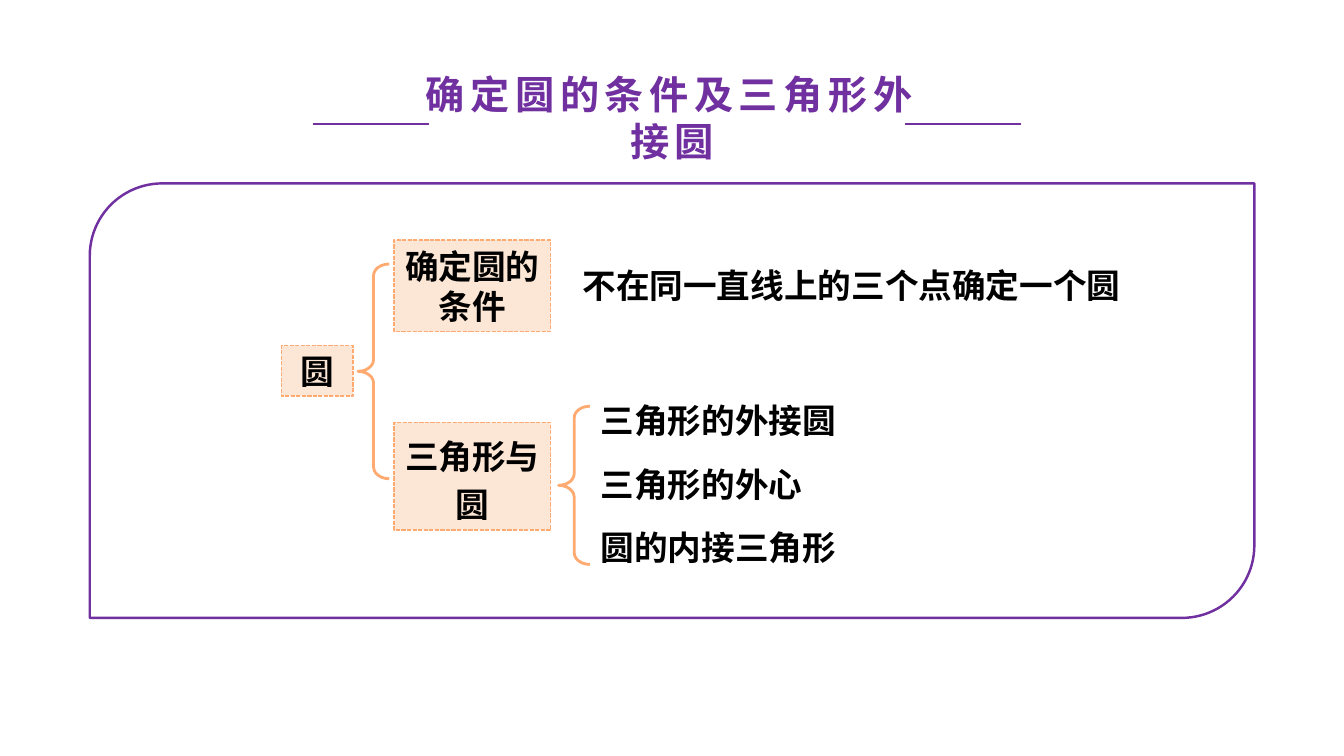
import pptx
import pptx.dml.color
import pptx.enum.dml
import pptx.enum.shapes
import pptx.enum.text
import pptx.oxml.ns
import pptx.util
from lxml import etree

SHAPE = pptx.enum.shapes.MSO_SHAPE
ANCHOR = pptx.enum.text.MSO_ANCHOR
ALIGN = pptx.enum.text.PP_ALIGN
FIT = pptx.enum.text.MSO_AUTO_SIZE
Pt = pptx.util.Pt
WIDTH, HEIGHT = pptx.util.Inches(13.33), pptx.util.Inches(7.5)
COLORS = {"purple": "7030A0", "orange": "FFAA71", "peach": "FCE6D5", "black": "000000"}
CJK, LATIN = "Noto Sans CJK SC", "Times New Roman"
BOX_TEXT = {"alignment": ALIGN.CENTER, "space_after": Pt(12)}
BOX_FRAME = {"word_wrap": True, "auto_size": FIT.SHAPE_TO_FIT_TEXT, "vertical_anchor": ANCHOR.MIDDLE}


def rgb(name):
    """Return the named colour."""
    return pptx.dml.color.RGBColor.from_string(COLORS[name])


def place(x, y, w, h):
    """Turn percentages of the slide into lengths."""
    return [int(v * side / 100) for v, side in zip((x, y, w, h), (WIDTH, HEIGHT) * 2)]


def apply(obj, values):
    """Set each attribute in values on obj."""
    for key, value in values.items():
        setattr(obj, key, value)


def write(sp, text, frame, para, size=24, color="black", font=CJK):
    """Fill a shape with one bold paragraph and return its run."""
    tf = sp.text_frame
    apply(tf, frame)
    p = tf.paragraphs[0]
    apply(p, para)
    r = p.add_run()
    r.text = text
    apply(r.font, {"size": Pt(size), "bold": True, "name": font})
    r.font.color.rgb = rgb(color)
    ea = etree.SubElement(r.font._element, pptx.oxml.ns.qn("a:ea"))
    ea.set("typeface", CJK)
    return r


def add_title(s, text, at):
    """Format the title placeholder with spaced letters."""
    sp = s.shapes.title
    apply(sp, dict(zip(("left", "top", "width", "height"), place(*at))))
    frame = {"word_wrap": True, "auto_size": FIT.NONE, "vertical_anchor": ANCHOR.MIDDLE}
    frame.update(dict.fromkeys(("margin_left", "margin_right"), pptx.util.Inches(0.13)))
    frame.update(dict.fromkeys(("margin_top", "margin_bottom"), pptx.util.Inches(0.07)))
    r = write(sp, text, frame, {"alignment": ALIGN.CENTER}, 28, "purple")
    r.font._element.set("spc", "400")


def add_outline(s, kind, at, color, width):
    """Add an unfilled preset shape."""
    sp = s.shapes.add_shape(kind, *place(*at))
    sp.shadow.inherit = False
    sp.fill.background()
    sp.line.color.rgb = rgb(color)
    sp.line.width = Pt(width)
    return sp


def add_brace(s, at):
    """Add a left brace."""
    sp = add_outline(s, SHAPE.LEFT_BRACE, at, "orange", 2)
    sp.adjustments[0] = 0.37


def add_box(s, text, at, spacing=1.0):
    """Add a dashed topic box."""
    sp = add_outline(s, SHAPE.RECTANGLE, at, "orange", 1)
    sp.line.dash_style = pptx.enum.dml.MSO_LINE.SQUARE_DOT
    sp.fill.solid()
    sp.fill.fore_color.rgb = rgb("peach")
    write(sp, text, BOX_FRAME, {**BOX_TEXT, "line_spacing": spacing})


def add_label(s, text, at, wrap=True):
    """Add a plain text label."""
    sp = s.shapes.add_textbox(*place(*at))
    write(sp, text, {"word_wrap": wrap, "auto_size": FIT.SHAPE_TO_FIT_TEXT}, {}, font=LATIN)


def add_rule(s, x, y, length):
    """Add a horizontal line beside the title."""
    left, top, w, _ = place(x, y, length, 0)
    kind = pptx.enum.shapes.MSO_CONNECTOR.STRAIGHT
    c = s.shapes.add_connector(kind, left, top, left + w, top)
    c.line.color.rgb = rgb("purple")
    c.line.width = Pt(1)
    etree.SubElement(c._element.spPr, pptx.oxml.ns.qn("a:effectLst"))


def main():
    """Build the circle summary slide."""
    prs = pptx.Presentation()
    apply(prs, {"slide_width": WIDTH, "slide_height": HEIGHT})
    s = prs.slides.add_slide(prs.slide_layouts.get_by_name("Title Only"))
    add_outline(s, SHAPE.ROUND_2_DIAG_RECTANGLE, (6.68, 24.27, 86.65, 57.47), "purple", 1.75)
    add_title(s, "确定圆的条件及三角形外接圆", (30.31, 11.33, 39.38, 8.4))
    for x in (23.26, 67.37):
        add_rule(s, x, 16.4, 8.63)
    add_box(s, "圆", (20.93, 45.73, 5.33, 6.67))
    add_brace(s, (26.63, 34.93, 2.33, 28.4))
    add_box(s, "确定圆的条件", (29.33, 31.73, 11.63, 12.13))
    add_box(s, "三角形与圆", (29.33, 55.87, 11.63, 14.27), 1.2)
    add_label(s, "不在同一直线上的三个点确定一个圆", (42.61, 34.4, 41.71, 6.67), False)
    add_brace(s, (41.56, 53.73, 2.33, 20.93))
    for i, text in enumerate(("三角形的外接圆", "三角形的外心", "圆的内接三角形")):
        add_label(s, text, (43.96, 52.27 + 8.4 * i, 22.43, 6.67))
    prs.save("out.pptx")


if __name__ == "__main__":
    main()
